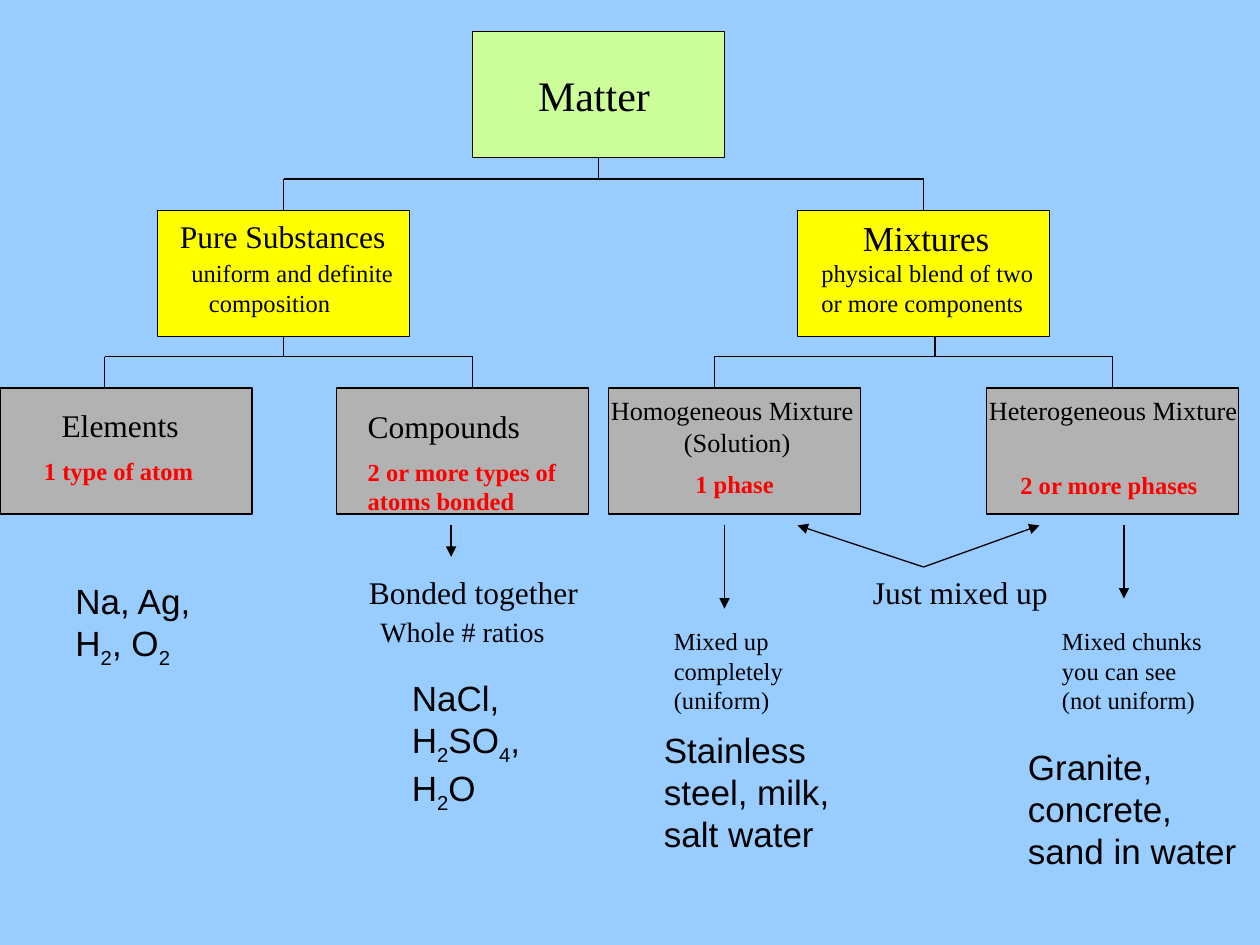
from lxml.etree import SubElement
from pptx import Presentation
from pptx.dml.color import RGBColor
from pptx.enum.shapes import MSO_CONNECTOR, MSO_SHAPE
from pptx.enum.text import MSO_ANCHOR, MSO_AUTO_SIZE, PP_ALIGN
from pptx.oxml.ns import qn
from pptx.util import Inches, Pt

BLACK, RED, GREEN, GREY, YELLOW = "000000", "FF0000", "CCFF99", "B2B2B2", "FFFF00"
SERIF, SANS = "Times New Roman", "Arial"
BOX_WIDTH, BOX_HEIGHT = 2, 1
TOP, BOTTOM = 0, 2

# name: left, top, fill
BOXES = {
    "matter": (3.75, 0.25, GREEN),
    "elements": (0, 3.08, GREY),
    "compounds": (2.67, 3.08, GREY),
    "heterogeneous": (7.83, 3.08, GREY),
    "homogeneous": (4.83, 3.08, GREY),
    "mixtures": (6.33, 1.67, YELLOW),
    "pure": (1.25, 1.67, YELLOW),
}

# parent, stem x, height of the branch line, {child: x of its drop}
BRANCHES = [
    ("matter", 4.75, 1.42, {"pure": 2.25, "mixtures": 7.33}),
    ("pure", 2.25, 2.83, {"elements": 0.83, "compounds": 3.75}),
    ("mixtures", 7.42, 2.83, {"homogeneous": 5.67, "heterogeneous": 8.83}),
]

ARROWS = [
    ((3.58, 4.17), (3.58, 4.42)),
    ((7.33, 4.5), (6.33, 4.17)),
    ((7.33, 4.5), (8.25, 4.17)),
    ((5.75, 4.17), (5.75, 4.83)),
    ((8.92, 4.17), (8.92, 4.75)),
]

TITLE = ((4.17, 0.5, 1.42, 0.5), [("Matter", 24, {})])

# place, paragraphs of (text, size, options); ~ encloses a subscript
LABELS = [
    ((1.33, 1.67, 1.83, 0.4), [("Pure Substances", 18, {})]),
    ((6.75, 1.67, 1.25, 0.43), [("Mixtures", 20, {})]),
    ((0.25, 3.17, 1.42, 0.75), [("Elements", 18, {"margin": 0.14}),
                                ("1 type of atom", 14, {"key": True})]),
    ((2.82, 3.18, 1.75, 0.98), [("Compounds", 18, {}),
                                ("2 or more types of atoms bonded", 14, {"key": True})]),
    ((4.75, 3.08, 2.17, 0.35), [("Homogeneous Mixture", 15, {})]),
    ((7.75, 3.08, 2.25, 0.35), [("Heterogeneous Mixture", 15, {})]),
    ((5.42, 3.67, 0.83, 0.33), [("1 phase", 14, {"key": True})]),
    ((8, 3.68, 1.67, 0.32), [("2 or more phases", 14, {"key": True})]),
    ((5.33, 3.33, 1.08, 0.35), [("(Solution)", 15, {})]),
    ((2.83, 4.5, 6.83, 0.4), [("Bonded together\tJust mixed up", 18, {"tab": 4})]),
    ((8.33, 4.92, 1.42, 0.8), [("Mixed chunks you can see (not uniform)", 14, {})]),
    ((5.25, 4.92, 1.17, 0.8), [("Mixed up completely (uniform)", 14, {})]),
    ((2.92, 4.83, 1.67, 0.37), [("Whole # ratios", 16, {})]),
    ((1.42, 2, 2.08, 0.57), [("uniform and definite composition", 14,
                              {"margin": 0.14, "indent": -0.14})]),
    ((6.42, 2, 1.92, 0.57), [("physical blend of two or more components", 14, {})]),
    ((0.5, 4.55, 1.16, 0.77), [("Na, Ag, H~2~, O~2~", 20, {"font": SANS})]),
    ((3.17, 5.32, 1.25, 1.11), [("NaCl, H~2~SO~4~, H~2~O", 20, {"font": SANS})]),
    ((5.17, 5.73, 1.58, 1.11), [("Stainless steel, milk, salt water", 20, {"font": SANS})]),
    ((8.06, 5.87, 1.87, 1.11), [("Granite, concrete, sand in water", 20, {"font": SANS})]),
]


def color(hex_value):
    return RGBColor.from_string(hex_value)


def add_box(slide, left, top, fill):
    box = slide.shapes.add_shape(MSO_SHAPE.RECTANGLE, Inches(left), Inches(top),
                                 Inches(BOX_WIDTH), Inches(BOX_HEIGHT))
    box.shadow.inherit = False
    box.fill.solid()
    box.fill.fore_color.rgb = color(fill)
    box.line.color.rgb = color(BLACK)
    box.line.width = Pt(0.75)
    return box


def add_line(slide, start, end, arrow=False):
    line = slide.shapes.add_connector(MSO_CONNECTOR.STRAIGHT,
                                      *(Inches(v) for v in (*start, *end)))
    line.line.color.rgb = color(BLACK)
    line.line.width = Pt(0.75)
    if arrow:
        SubElement(line.line._get_or_add_ln(), qn("a:tailEnd"), type="triangle")
    SubElement(line.element.spPr, qn("a:effectLst"))
    return line


def add_branch(slide, boxes, parent, stem_x, bar_y, drops):
    """Draw a stem below the parent, a bar, and a drop to each child."""
    def is_middle(name, x):
        return abs(BOXES[name][0] + BOX_WIDTH / 2 - x) < 0.01

    stem = add_line(slide, (stem_x, BOXES[parent][1] + BOX_HEIGHT), (stem_x, bar_y))
    if is_middle(parent, stem_x):
        stem.begin_connect(boxes[parent], BOTTOM)
    add_line(slide, (min(drops.values()), bar_y), (max(drops.values()), bar_y))
    for child, x in drops.items():
        drop = add_line(slide, (x, bar_y), (x, BOXES[child][1]))
        if is_middle(child, x):
            drop.end_connect(boxes[child], TOP)


def write_paragraph(paragraph, text, size, options):
    paragraph.alignment = PP_ALIGN.LEFT
    paragraph.space_before = Pt(size / 2)
    properties = paragraph._p.get_or_add_pPr()
    for option, attribute in {"margin": "marL", "indent": "indent"}.items():
        if option in options:
            properties.set(attribute, str(Inches(options[option])))
    if "tab" in options:
        tabs = SubElement(properties, qn("a:tabLst"))
        SubElement(tabs, qn("a:tab"), pos=str(Inches(options["tab"])), algn="l")
    key = options.get("key", False)
    style = {"name": options.get("font", SERIF), "size": Pt(size), "bold": key}
    for index, part in enumerate(text.split("~")):
        if not part:
            continue
        run = paragraph.add_run()
        run.text = part
        for attribute, value in style.items():
            setattr(run.font, attribute, value)
        run.font.color.rgb = color(RED if key else BLACK)
        if index % 2:
            run.font._element.set("baseline", "-25000")


def fill_text(shape, place, paragraphs):
    for side, value in zip(("left", "top", "width", "height"), place):
        setattr(shape, side, Inches(value))
    frame = shape.text_frame
    layout = {"word_wrap": True, "auto_size": MSO_AUTO_SIZE.NONE,
              "vertical_anchor": MSO_ANCHOR.TOP,
              "margin_left": Inches(0.1), "margin_right": Inches(0.1),
              "margin_top": Inches(0.05), "margin_bottom": Inches(0.05)}
    for attribute, value in layout.items():
        setattr(frame, attribute, value)
    for index, content in enumerate(paragraphs):
        paragraph = frame.add_paragraph() if index else frame.paragraphs[0]
        write_paragraph(paragraph, *content)


def main():
    deck = Presentation()
    deck.slide_width, deck.slide_height = Inches(10), Inches(7.5)
    slide = deck.slides.add_slide(deck.slide_layouts[5])
    slide.background.fill.solid()
    slide.background.fill.fore_color.rgb = color("99CCFF")

    boxes = {name: add_box(slide, *box) for name, box in BOXES.items()}
    title = slide.shapes.title
    fill_text(title, *TITLE)
    boxes["pure"].element.addnext(title.element)  # in front of the boxes
    for branch in BRANCHES:
        add_branch(slide, boxes, *branch)
    for start, end in ARROWS:
        add_line(slide, start, end, arrow=True)
    for place, paragraphs in LABELS:
        fill_text(slide.shapes.add_textbox(0, 0, 0, 0), place, paragraphs)
    deck.save("out.pptx")


if __name__ == "__main__":
    main()
